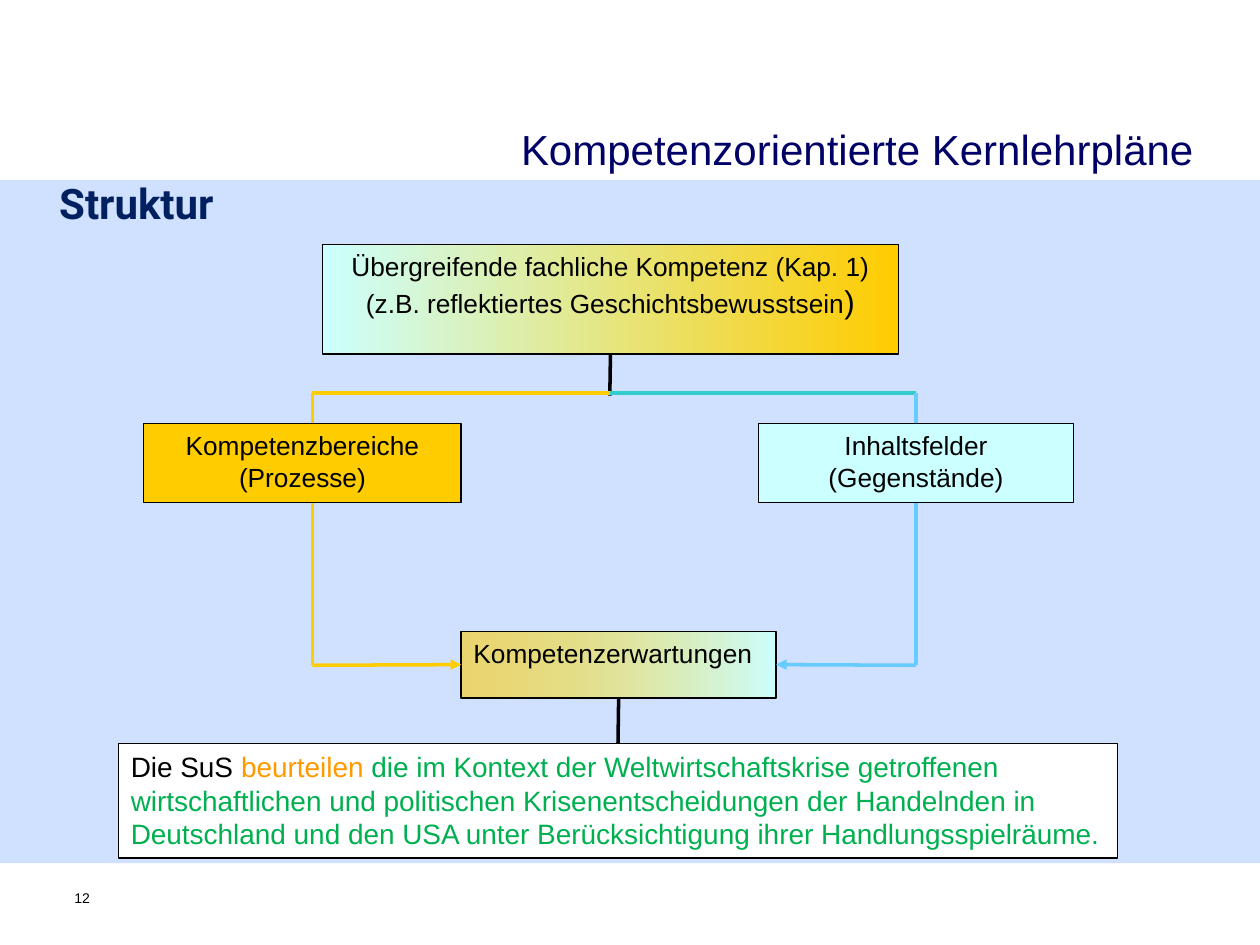
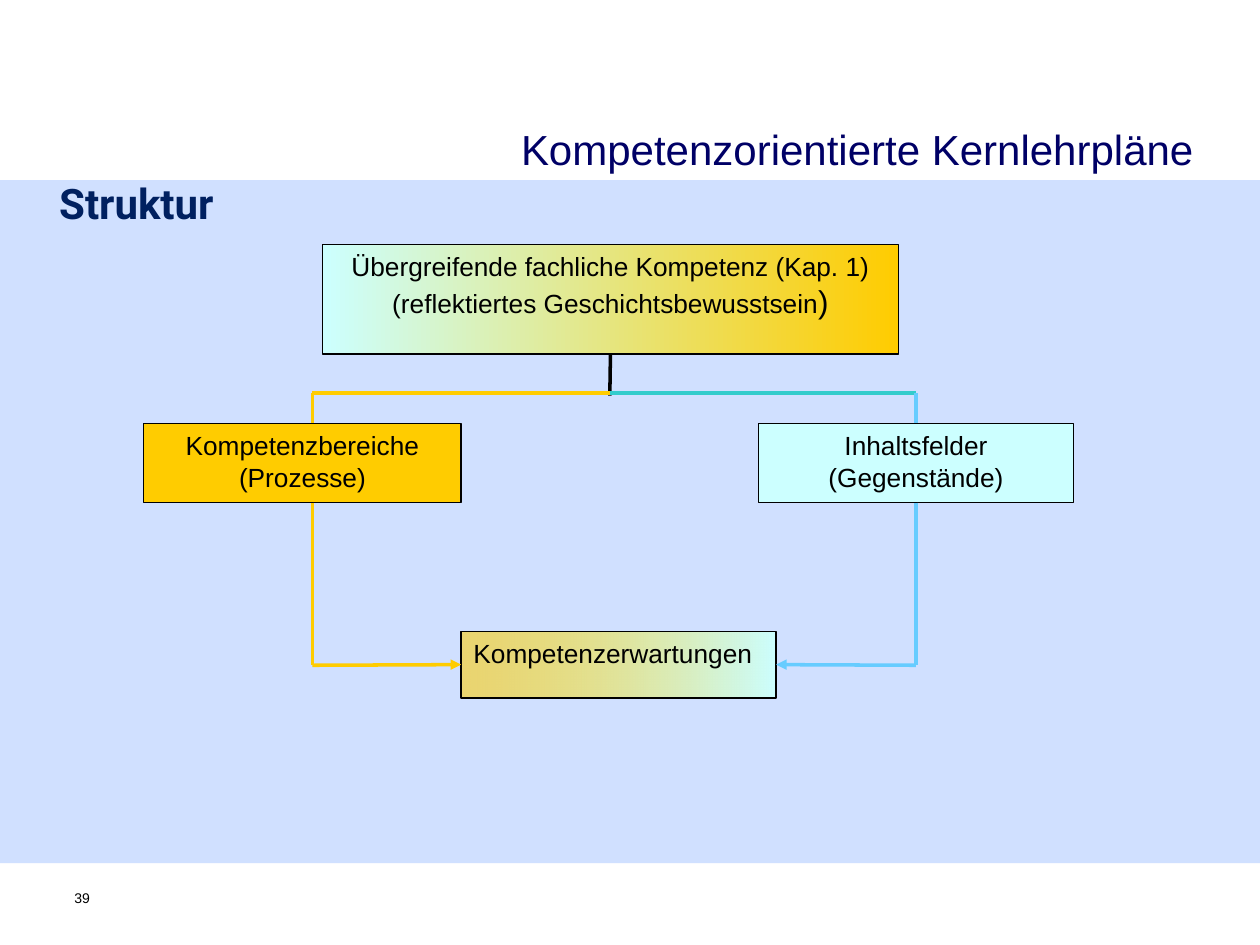
from dataclasses import dataclass

from lxml import etree
from pptx import Presentation
from pptx.dml.color import RGBColor
from pptx.enum.shapes import MSO_CONNECTOR, MSO_SHAPE
from pptx.enum.text import MSO_ANCHOR, MSO_AUTO_SIZE, PP_ALIGN
from pptx.oxml.ns import qn
from pptx.util import Inches, Pt

RECTANGLE = MSO_SHAPE.RECTANGLE
STRAIGHT = MSO_CONNECTOR.STRAIGHT
LEFT, CENTER, RIGHT = PP_ALIGN.LEFT, PP_ALIGN.CENTER, PP_ALIGN.RIGHT
TOP_SIDE, LEFT_SIDE, BOTTOM_SIDE, RIGHT_SIDE = range(4)

BLACK = "000000"
WHITE = "FFFFFF"
BAND_BLUE = "6699FF"
TITLE_BLUE = "002060"
HEADER_BLUE = "000066"
GOLD = "FFCC00"
ICE = "CCFFFF"
TEAL = "33CCCC"
SKY = "66CCFF"
ORANGE = "FF9900"
GREEN = "00B050"

LEFT_X, MIDDLE_X, RIGHT_X = 2.48, 4.84, 7.27
BRANCH_Y, ELBOW_Y = 3.12, 5.28


@dataclass
class TextRun:
    text: str
    color: str = BLACK
    size: float | None = None


@dataclass
class Box:
    name: str
    position: tuple[float, float, float, float]
    paragraphs: list[list[TextRun]]
    fills: tuple[str, ...]
    alignment: PP_ALIGN = CENTER
    size: float = 15
    first_opacity: int = 100


@dataclass
class Anchor:
    box: str
    side: int


@dataclass
class Line:
    start: Anchor | tuple[float, float]
    end: Anchor | tuple[float, float]
    color: str
    arrow: bool = False


def rgb(color: str) -> RGBColor:
    return RGBColor.from_string(color)


def bounds(position: tuple[float, float, float, float]) -> list[Inches]:
    return [Inches(value) for value in position]


def set_opacity(shape, percent: int) -> None:
    color = next(shape.element.iter(qn("a:srgbClr")))
    etree.SubElement(color, qn("a:alpha")).set("val", str(percent * 1000))


def style_paragraph(paragraph, font_name: str, size: float, color: str,
                    alignment: PP_ALIGN, bold: bool = False) -> None:
    paragraph.alignment = alignment
    font = paragraph.font
    font.name, font.size, font.bold = font_name, Pt(size), bold
    font.color.rgb = rgb(color)


def clear_margins(frame) -> None:
    frame.margin_left = frame.margin_right = 0
    frame.margin_top = frame.margin_bottom = 0


def add_label(slide, position, text: str, size: float, color: str,
              alignment: PP_ALIGN):
    frame = slide.shapes.add_textbox(*bounds(position)).text_frame
    frame.word_wrap = True
    frame.text = text
    style_paragraph(frame.paragraphs[0], "Arial", size, color, alignment)
    return frame


def add_frame(slide, page_number: str) -> None:
    title = slide.shapes.title
    title.left, title.top, title.width, title.height = bounds((0.33, 1.41, 8.82, 0.47))
    frame = title.text_frame
    frame.text = "Struktur"
    frame.auto_size = MSO_AUTO_SIZE.NONE
    frame.vertical_anchor = MSO_ANCHOR.TOP
    clear_margins(frame)
    frame.margin_left = Inches(0.14)
    style_paragraph(frame.paragraphs[0], "Roboto", 24, TITLE_BLUE, LEFT, bold=True)

    band = slide.shapes.add_shape(RECTANGLE, *bounds((0, 1.43, 10, 5.42)))
    band.shadow.inherit = False
    band.fill.solid()
    band.fill.fore_color.rgb = rgb(BAND_BLUE)
    set_opacity(band, 30)
    band.line.fill.background()
    title.element.addprevious(band.element)

    add_label(slide, (3.54, 0.93, 6.03, 0.51), "Kompetenzorientierte Kernlehrpläne",
              24, HEADER_BLUE, RIGHT)
    clear_margins(add_label(slide, (0.59, 7.06, 0.32, 0.37), page_number,
                            8, BLACK, LEFT))


def add_box(slide, box: Box):
    shape = slide.shapes.add_shape(RECTANGLE, *bounds(box.position))
    shape.shadow.inherit = False
    if len(box.fills) == 1:
        shape.fill.solid()
        shape.fill.fore_color.rgb = rgb(box.fills[0])
    else:
        shape.fill.gradient()
        shape.fill.gradient_angle = 0
        for stop, color in zip(shape.fill.gradient_stops, box.fills):
            stop.color.rgb = rgb(color)
    if box.first_opacity < 100:
        set_opacity(shape, box.first_opacity)
    shape.line.color.rgb = rgb(BLACK)
    shape.line.width = Pt(0.75)

    frame = shape.text_frame
    frame.word_wrap = True
    frame.vertical_anchor = MSO_ANCHOR.TOP
    for index, text_runs in enumerate(box.paragraphs):
        paragraph = frame.add_paragraph() if index else frame.paragraphs[0]
        style_paragraph(paragraph, "Arial", box.size, BLACK, box.alignment)
        for text_run in text_runs:
            run = paragraph.add_run()
            run.text = text_run.text
            if text_run.color != BLACK:
                run.font.color.rgb = rgb(text_run.color)
            if text_run.size:
                run.font.size = Pt(text_run.size)
    return shape


def add_line(slide, line: Line, shapes: dict) -> None:
    points = [(0, 0) if isinstance(end, Anchor) else end
              for end in (line.start, line.end)]
    connector = slide.shapes.add_connector(
        STRAIGHT, *[Inches(value) for point in points for value in point])
    for end, connect in ((line.start, connector.begin_connect),
                         (line.end, connector.end_connect)):
        if isinstance(end, Anchor):
            connect(shapes[end.box], end.side)
    connector.line.color.rgb = rgb(line.color)
    connector.line.width = Pt(2)
    properties = connector.element.spPr
    if line.arrow:
        etree.SubElement(properties.find(qn("a:ln")), qn("a:tailEnd")).set("type", "triangle")
    etree.SubElement(properties, qn("a:effectLst"))


def structure_boxes(example: str) -> list[Box]:
    return [
        Box("expectations", (3.66, 5.01, 2.5, 0.53),
            [[TextRun("Kompetenzerwartungen")]], (GOLD, ICE), LEFT, first_opacity=56),
        Box("processes", (1.14, 3.36, 2.52, 0.63),
            [[TextRun("Kompetenzbereiche")], [TextRun("(Prozesse)")]], (GOLD,)),
        Box("competence", (2.56, 1.94, 4.57, 0.87),
            [[TextRun("Übergreifende fachliche Kompetenz (Kap. 1)")],
             [TextRun(example), TextRun(")", size=18)]], (ICE, GOLD)),
        Box("contents", (6.02, 3.36, 2.5, 0.63),
            [[TextRun("Inhaltsfelder")], [TextRun("(Gegenstände)")]], (ICE,)),
    ]


STRUCTURE_LINES = [
    Line(Anchor("competence", BOTTOM_SIDE), (MIDDLE_X, 3.14), BLACK),
    Line((MIDDLE_X, BRANCH_Y), (LEFT_X, BRANCH_Y), GOLD),
    Line((MIDDLE_X, BRANCH_Y), (RIGHT_X, BRANCH_Y), TEAL),
    Line((LEFT_X, BRANCH_Y), (LEFT_X, 3.36), GOLD),
    Line((RIGHT_X, BRANCH_Y), Anchor("contents", TOP_SIDE), SKY),
    Line((LEFT_X, 3.99), (LEFT_X, ELBOW_Y), GOLD),
    Line(Anchor("contents", BOTTOM_SIDE), (RIGHT_X, ELBOW_Y), SKY),
    Line((LEFT_X, ELBOW_Y), Anchor("expectations", LEFT_SIDE), GOLD, arrow=True),
    Line((RIGHT_X, ELBOW_Y), Anchor("expectations", RIGHT_SIDE), SKY, arrow=True),
]

STATEMENT = Box(
    "statement", (0.94, 5.9, 7.93, 0.91),
    [[TextRun("Die SuS "), TextRun("beurteilen ", ORANGE),
      TextRun("die im Kontext der Weltwirtschaftskrise getroffenen wirtschaftlichen "
              "und politischen Krisenentscheidungen der Handelnden in Deutschland und "
              "den USA unter Berücksichtigung ihrer Handlungsspielräume.", GREEN)]],
    (WHITE,), LEFT, 16)
STATEMENT_LINE = Line(Anchor("expectations", BOTTOM_SIDE),
                      Anchor("statement", TOP_SIDE), BLACK)


def add_structure_slide(presentation, page_number: str, boxes: list[Box],
                        lines: list[Line]) -> None:
    slide = presentation.slides.add_slide(presentation.slide_layouts[5])
    add_frame(slide, page_number)
    shapes = {box.name: add_box(slide, box) for box in boxes}
    for line in lines:
        add_line(slide, line, shapes)


def main() -> None:
    presentation = Presentation()
    presentation.slide_width, presentation.slide_height = Inches(10), Inches(7.5)
    add_structure_slide(
        presentation, "12",
        structure_boxes("(z.B. reflektiertes Geschichtsbewusstsein") + [STATEMENT],
        STRUCTURE_LINES + [STATEMENT_LINE])
    add_structure_slide(
        presentation, "39",
        structure_boxes("(reflektiertes Geschichtsbewusstsein"), STRUCTURE_LINES)
    presentation.save("out.pptx")


if __name__ == "__main__":
    main()
